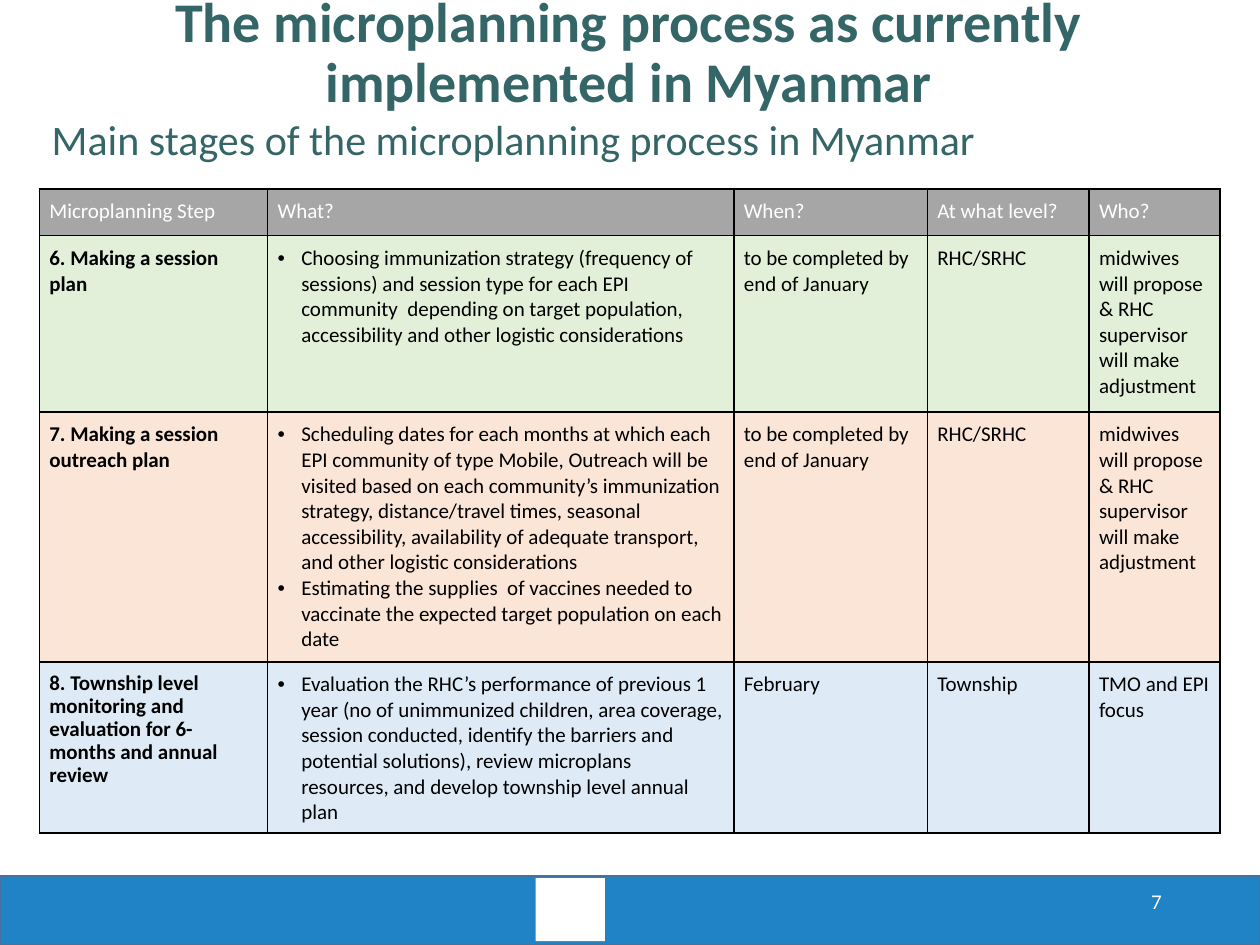
"""Build the slide on the microplanning process in Myanmar."""
from dataclasses import dataclass
from typing import Any

import lxml.etree
import pptx
import pptx.dml.color
import pptx.enum.shapes
import pptx.enum.text
import pptx.oxml.ns
import pptx.util

Pt = pptx.util.Pt
RGBColor = pptx.dml.color.RGBColor
Align = pptx.enum.text.PP_ALIGN
Anchor = pptx.enum.text.MSO_ANCHOR
qn = pptx.oxml.ns.qn

WHITE = RGBColor(0xFF, 0xFF, 0xFF)
BLACK = RGBColor(0x00, 0x00, 0x00)
TEAL = RGBColor(0x34, 0x66, 0x67)
BAR_BLUE = RGBColor(0x1F, 0x83, 0xC5)
BAR_EDGE = RGBColor(0x43, 0x73, 0x9E)
GREY = RGBColor(0xA6, 0xA6, 0xA6)
GREEN = RGBColor(0xE2, 0xF0, 0xD9)
ORANGE = RGBColor(0xFB, 0xE5, 0xD6)
BLUE = RGBColor(0xDE, 0xEB, 0xF7)

FONT = "Calibri"
CELL_INSET = Pt(5.7)
BULLET_INDENT = Pt(13.5)
COLUMN_WIDTHS = (130.5, 266.4, 110.6, 92.4, 74.9)
HEADINGS = ("Microplanning Step", "What?", "When?", "At what level?", "Who?")


@dataclass(frozen=True)
class Frame:
    """Position and size in points."""

    left: float
    top: float
    width: float
    height: float

    def lengths(self) -> tuple:
        """Return the four lengths for a shape call."""
        return tuple(Pt(n) for n in (self.left, self.top, self.width, self.height))


@dataclass(frozen=True)
class Style:
    """Look of one paragraph."""

    size: float
    color: RGBColor
    bold: bool = False
    align: Any = Align.LEFT
    spacing: float = 1.0
    bullet: bool = False


@dataclass(frozen=True)
class Step:
    """One row of the stages table."""

    name: str
    tasks: tuple
    when: str
    level: str
    who: str
    fill: RGBColor
    height: float
    spacing: float = 1.0


JANUARY = "to be completed by end of January"
MIDWIVES = "midwives will propose & RHC supervisor will make adjustment"
STEPS = (
    Step(
        "6. Making a session plan",
        ("Choosing immunization strategy (frequency of sessions) and session type for each EPI "
         "community  depending on target population, accessibility and other logistic "
         "considerations",),
        JANUARY, "RHC/SRHC", MIDWIVES, GREEN, 100.8,
    ),
    Step(
        "7. Making a session outreach plan",
        ("Scheduling dates for each months at which each EPI community of type Mobile, Outreach "
         "will be visited based on each community’s immunization strategy, distance/travel times, "
         "seasonal accessibility, availability of adequate transport, and other logistic "
         "considerations",
         "Estimating the supplies  of vaccines needed to vaccinate the expected target population "
         "on each date"),
        JANUARY, "RHC/SRHC", MIDWIVES, ORANGE, 142.8,
    ),
    Step(
        "8. Township level monitoring and evaluation for 6-months and annual review",
        ("Evaluation the RHC’s performance of previous 1 year (no of unimmunized children, area "
         "coverage, session conducted, identify the barriers and potential solutions), review "
         "microplans resources, and develop township level annual plan",),
        "February", "Township", "TMO and EPI focus", BLUE, 84.6, 0.9,
    ),
)


def write(text_frame: Any, lines: tuple, style: Style) -> None:
    """Fill a text frame with one paragraph per line."""
    for index, line in enumerate(lines):
        para = text_frame.paragraphs[0] if index == 0 else text_frame.add_paragraph()
        if style.bullet:
            properties = para._p.get_or_add_pPr()
            properties.set("marL", str(BULLET_INDENT))
            properties.set("indent", str(-BULLET_INDENT))
            lxml.etree.SubElement(properties, qn("a:buFont"), typeface="Arial")
            lxml.etree.SubElement(properties, qn("a:buChar"), char="•")
        para.alignment = style.align
        para.line_spacing = style.spacing
        span = para.add_run()
        span.text = line
        span.font.name = FONT
        span.font.size = Pt(style.size)
        span.font.bold = style.bold
        span.font.color.rgb = style.color


def add_text(page: Any, frame: Frame, text: str, style: Style, anchor: Any) -> None:
    """Add a wrapped text box."""
    box = page.shapes.add_textbox(*frame.lengths())
    box.text_frame.word_wrap = True
    box.text_frame.vertical_anchor = anchor
    write(box.text_frame, (text,), style)


def add_block(page: Any, frame: Frame, fill: RGBColor, edge: RGBColor | None = None) -> None:
    """Add a plain filled rectangle."""
    block = page.shapes.add_shape(pptx.enum.shapes.MSO_SHAPE.RECTANGLE, *frame.lengths())
    block.shadow.inherit = False
    block.fill.solid()
    block.fill.fore_color.rgb = fill
    if edge is None:
        block.line.fill.background()
    else:
        block.line.color.rgb = edge
        block.line.width = Pt(1)


def fill_cell(cell: Any, lines: tuple, style: Style, fill: RGBColor) -> None:
    """Write a table cell and give it borders and a fill."""
    cell.margin_left = cell.margin_right = CELL_INSET
    cell.margin_top = cell.margin_bottom = CELL_INSET
    write(cell.text_frame, lines, style)
    properties = cell._tc.get_or_add_tcPr()
    for side in ("lnL", "lnR", "lnT", "lnB"):
        border = lxml.etree.SubElement(properties, qn(f"a:{side}"), w=str(Pt(1)))
        paint = lxml.etree.SubElement(border, qn("a:solidFill"))
        lxml.etree.SubElement(paint, qn("a:srgbClr"), val=str(BLACK))
    cell.fill.solid()
    cell.fill.fore_color.rgb = fill


def add_steps(page: Any, left: float, top: float) -> None:
    """Add the table of microplanning steps."""
    heights = (26.6, *(step.height for step in STEPS))
    frame = Frame(left, top, sum(COLUMN_WIDTHS), sum(heights))
    table = page.shapes.add_table(len(heights), len(COLUMN_WIDTHS), *frame.lengths()).table
    for column, width in zip(table.columns, COLUMN_WIDTHS):
        column.width = Pt(width)
    for row, height in zip(table.rows, heights):
        row.height = Pt(height)
    for column, heading in enumerate(HEADINGS):
        fill_cell(table.cell(0, column), (heading,), Style(12, WHITE), GREY)
    plain = Style(12, BLACK)
    for row, step in enumerate(STEPS, start=1):
        name_style = Style(12, BLACK, bold=True, spacing=step.spacing)
        fill_cell(table.cell(row, 0), (step.name,), name_style, step.fill)
        fill_cell(table.cell(row, 1), step.tasks, Style(12, BLACK, bullet=True), step.fill)
        for column, text in enumerate((step.when, step.level, step.who), start=2):
            fill_cell(table.cell(row, column), (text,), plain, step.fill)


def main() -> None:
    """Build and save the deck."""
    deck = pptx.Presentation()
    deck.slide_width, deck.slide_height = Pt(720), Pt(540)
    page = deck.slides.add_slide(deck.slide_layouts[6])
    add_block(page, Frame(0, 500.4, 720, 39.6), BAR_BLUE, BAR_EDGE)
    add_block(page, Frame(306, 501.8, 39.6, 36), WHITE)
    add_text(page, Frame(509, 500.4, 162, 28.8), "7",
             Style(12, WHITE, align=Align.RIGHT), Anchor.MIDDLE)
    add_steps(page, 22.5, 108)
    add_text(page, Frame(49, 0, 620.6, 62),
             "The microplanning process as currently implemented in Myanmar",
             Style(32, TEAL, bold=True, align=Align.CENTER, spacing=0.9), Anchor.MIDDLE)
    add_text(page, Frame(22.5, 64.8, 676, 34.6),
             "Main stages of the microplanning process in Myanmar",
             Style(24, TEAL, spacing=0.9), Anchor.TOP)
    deck.save("out.pptx")


if __name__ == "__main__":
    main()
